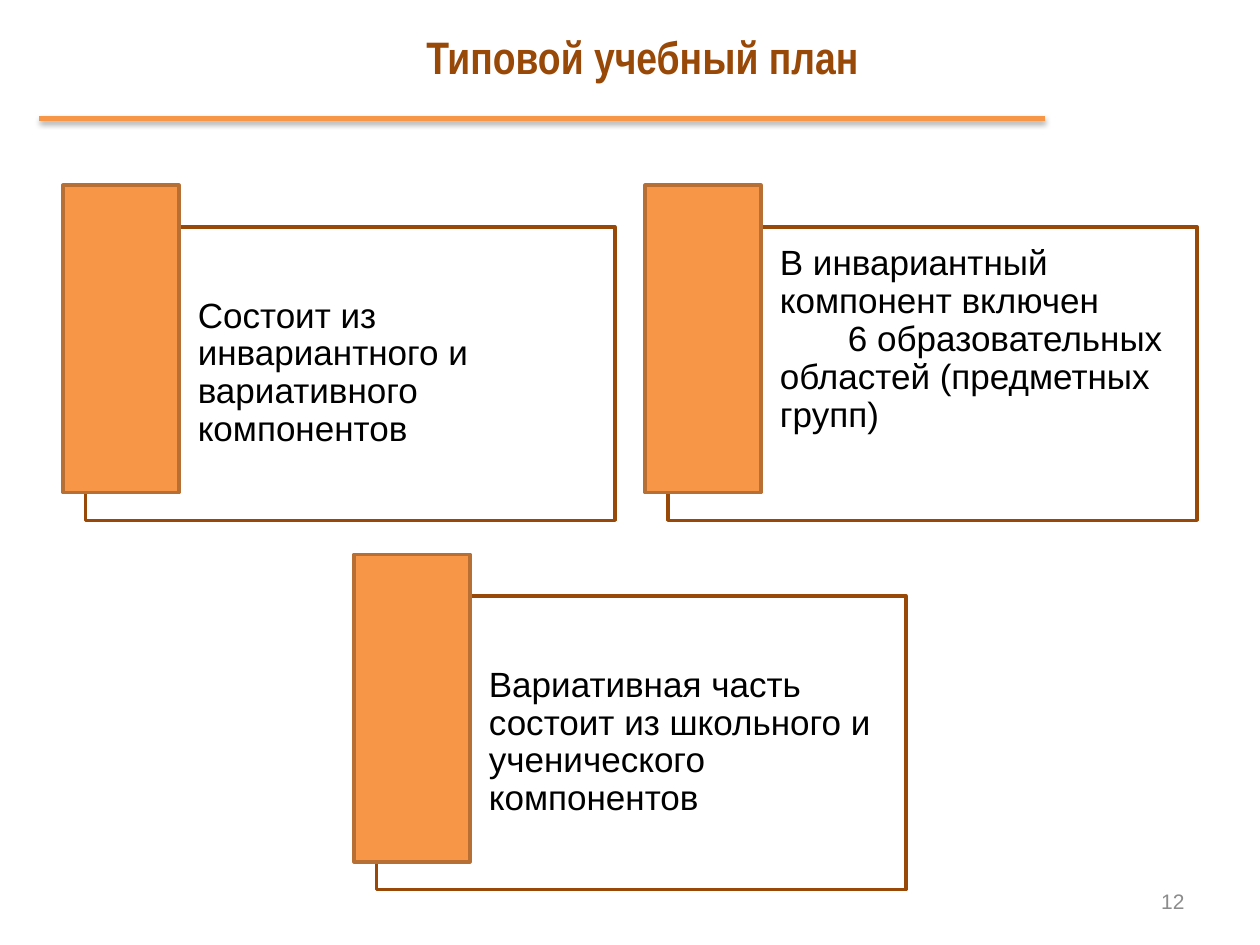
from lxml.etree import SubElement
from pptx import Presentation
from pptx.dml.color import RGBColor
from pptx.enum.shapes import MSO_CONNECTOR as Connector, MSO_SHAPE as Shape
from pptx.enum.text import MSO_ANCHOR as Anchor, PP_ALIGN as Align
from pptx.oxml.ns import qn
from pptx.util import Inches, Pt

ORANGE, BROWN, EDGE = "F79646", "984807", "B76F34"
WHITE, BLACK, GRAY = "FFFFFF", "000000", "8C8C8C"

# Card grid: pitch of columns and rows, in inches
GRID_LEFT, GRID_TOP = 0.5, 1.47
COLUMN, ROW = 4.62, 2.93

# Column, row, text, anchor, top inset
CARDS = [
    (0, 0, "Состоит из инвариантного и вариативного компонентов",
     Anchor.MIDDLE, 0.24),
    (1, 0, "В инвариантный компонент включен\v\t6 образовательных областей "
     "(предметных групп)", Anchor.TOP, 0.15),
    (0.5, 1, "Вариативная часть состоит из школьного и ученического "
     "компонентов", Anchor.MIDDLE, 0.24),
]


def color(hex_value):
    return RGBColor.from_string(hex_value)


def apply(target, formats):
    for name, value in formats.items():
        setattr(target, name, value)


def write(frame, text, size, hex_value, font="Arial", bold=False,
          paragraph_format=None, **frame_format):
    apply(frame, {"word_wrap": True, **frame_format})
    paragraph = frame.paragraphs[0]
    paragraph.text = text
    apply(paragraph, paragraph_format or {})
    for run in paragraph.runs:
        apply(run.font, {"name": font, "size": Pt(size), "bold": bold})
        run.font.color.rgb = color(hex_value)
    return paragraph


def add_box(slide, left, top, width, height, fill, line):
    box = slide.shapes.add_shape(Shape.RECTANGLE, *map(Inches, (left, top, width, height)))
    box.shadow.inherit = False
    box.fill.solid()
    box.fill.fore_color.rgb = color(fill)
    box.line.color.rgb = color(line)
    box.line.width = Pt(2)
    return box


def add_tab_stop(paragraph, position):
    tabs = SubElement(paragraph._p.get_or_add_pPr(), qn("a:tabLst"))
    SubElement(tabs, qn("a:tab"), pos=str(Inches(position)), algn="l")


def add_card(slide, column, row, text, anchor, top_inset):
    left, top = GRID_LEFT + column * COLUMN, GRID_TOP + row * ROW
    panel = add_box(slide, left + 0.18, top + 0.33, 4.2, 2.33, WHITE, BROWN)
    paragraph = write(
        panel.text_frame, text, 20, BLACK,
        paragraph_format={"alignment": Align.LEFT, "line_spacing": 0.9},
        vertical_anchor=anchor, margin_left=Inches(0.89),
        margin_top=Inches(top_inset), margin_right=Inches(0.24),
        margin_bottom=Inches(0.24))
    if "\t" in text:
        add_tab_stop(paragraph, 0.54)
    add_box(slide, left, top, 0.92, 2.44, ORANGE, EDGE)


def add_title(slide, text):
    title = slide.shapes.title
    apply(title, {"left": Inches(0.2), "top": Inches(0.13),
                  "width": Inches(9.8), "height": Inches(0.63)})
    write(title.text_frame, text, 26, BROWN, "Arial Narrow", True,
          {"alignment": Align.CENTER}, vertical_anchor=Anchor.MIDDLE)


def add_rule(slide, left, right, y):
    rule = slide.shapes.add_connector(
        Connector.STRAIGHT, *map(Inches, (left, y, right, y)))
    rule.line.color.rgb = color(ORANGE)
    rule.line.width = Pt(3)
    # Soft shadow below the rule
    effects = SubElement(rule._element.spPr, qn("a:effectLst"))
    shadow = SubElement(effects, qn("a:outerShdw"), blurRad=str(Pt(3.1)),
                        dist=str(Pt(1.8)), dir=str(90 * 60000), rotWithShape="0")
    tint = SubElement(shadow, qn("a:srgbClr"), val=BLACK)
    SubElement(tint, qn("a:alpha"), val="35000")


def add_page_number(slide, number):
    box = slide.shapes.add_textbox(*map(Inches, (7.17, 6.95, 2.33, 0.4)))
    write(box.text_frame, number, 12, GRAY,
          paragraph_format={"alignment": Align.RIGHT},
          vertical_anchor=Anchor.MIDDLE)


def main():
    deck = Presentation()
    apply(deck, {"slide_width": Inches(10), "slide_height": Inches(7.5)})
    slide = deck.slides.add_slide(deck.slide_layouts.get_by_name("Title Only"))
    add_title(slide, "Типовой учебный план")
    for card in CARDS:
        add_card(slide, *card)
    add_page_number(slide, "12")
    add_rule(slide, 0.31, 8.29, 0.94)
    deck.save("out.pptx")


if __name__ == "__main__":
    main()
